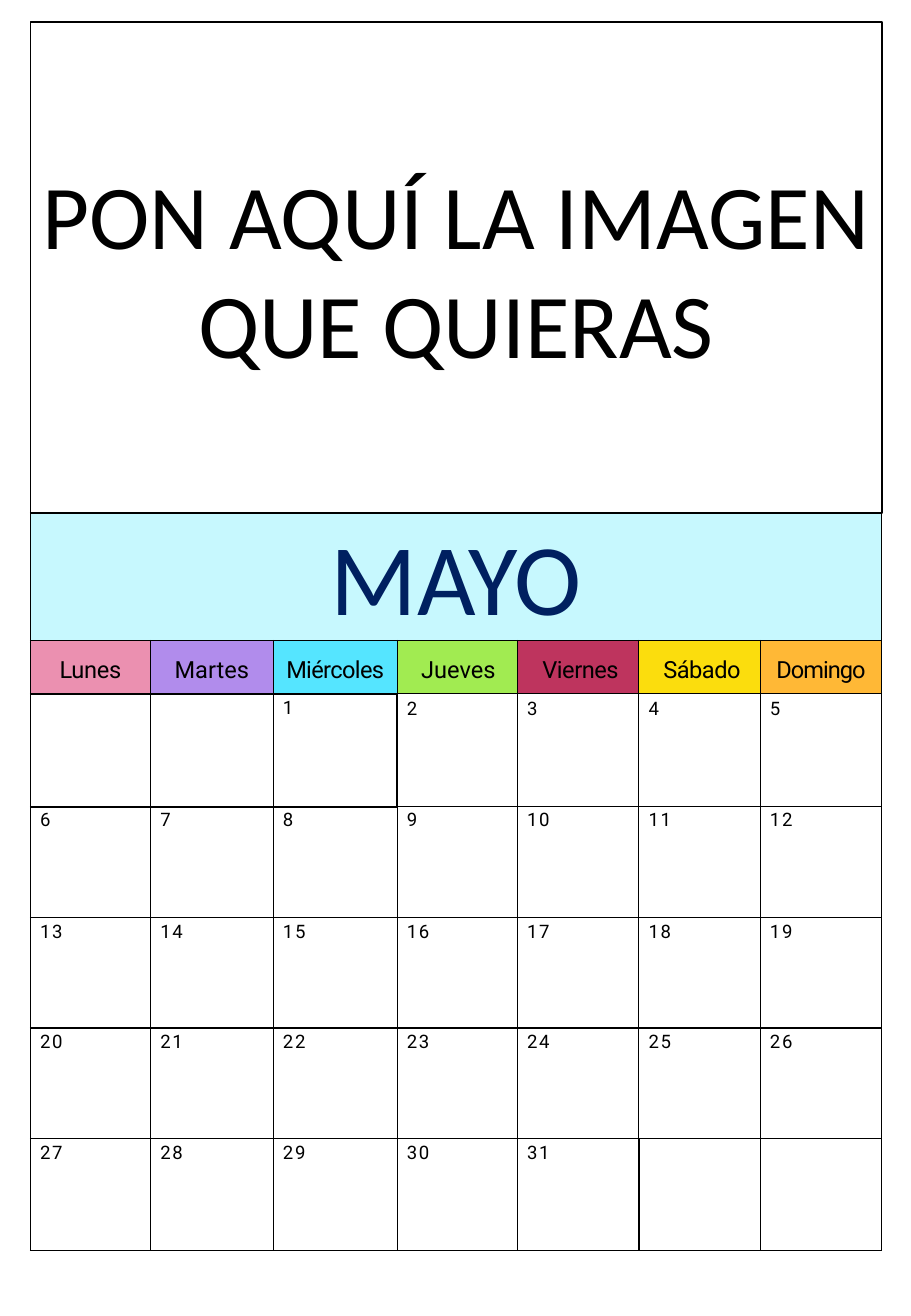
from lxml.etree import SubElement
from pptx import Presentation
from pptx.dml.color import RGBColor
from pptx.enum.shapes import MSO_SHAPE
from pptx.enum.text import MSO_ANCHOR, PP_ALIGN
from pptx.oxml.ns import qn
from pptx.util import Pt

PX = 9144
BLACK = RGBColor(0x00, 0x00, 0x00)
WHITE = RGBColor(0xFF, 0xFF, 0xFF)
NAVY = RGBColor(0x00, 0x20, 0x60)
PALE_CYAN = RGBColor(0xC7, 0xF8, 0xFE)
PINK = RGBColor(0xEB, 0x90, 0xB0)
PURPLE = RGBColor(0xB1, 0x8C, 0xEC)
CYAN = RGBColor(0x55, 0xE5, 0xFF)
GREEN = RGBColor(0xA1, 0xEB, 0x51)
CRIMSON = RGBColor(0xBE, 0x34, 0x5E)
YELLOW = RGBColor(0xFB, 0xDD, 0x0D)
ORANGE = RGBColor(0xFF, 0xB8, 0x36)

WEEKDAYS = [
    ("Lunes", PINK, -20, 0),
    ("Martes", PURPLE, 0, 0),
    ("Miércoles", CYAN, -40, 0),
    ("Jueves", GREEN, 0, 2),
    ("Viernes", CRIMSON, -30, 4),
    ("Sábado", YELLOW, -30, 4),
    ("Domingo", ORANGE, -60, 0),
]
FIRST_COLUMN = 2
DAYS_IN_MONTH = 31
COLUMN_WIDTHS = [99, 101, 102, 99, 100, 100, 100]
ROW_HEIGHTS = [44, 93, 91, 91, 91, 92]
WEEK_INSETS = [4, 2, 3, 3, 3]
STRONG_CELLS = {(1, 0), (1, 1), (1, 2), (5, 5), (5, 6)}
SIDES = {"lnL": (0, -1), "lnR": (0, 1), "lnT": (-1, 0), "lnB": (1, 0)}


def write(paragraph, text, font, size, color, spacing=0):
    run = paragraph.add_run()
    run.text = text
    run.font.name = font
    run.font.size = Pt(size)
    run.font.color.rgb = color
    if spacing:
        run.font._element.set("spc", str(spacing))


def add_grid(slide, left, top, widths, heights):
    box = [value * PX for value in (left, top, sum(widths), sum(heights))]
    table = slide.shapes.add_table(len(heights), len(widths), *box).table
    table.first_row = False
    table.horz_banding = False
    for column, width in zip(table.columns, widths):
        column.width = width * PX
    for row, height in zip(table.rows, heights):
        row.height = height * PX
    return table


def format_cell(cell, fill, inset, strong_sides=()):
    properties = cell._tc.get_or_add_tcPr()
    for side in SIDES:
        width = Pt(1 if side in strong_sides else 0.75)
        line = SubElement(properties, qn(f"a:{side}"), w=str(width))
        solid = SubElement(line, qn("a:solidFill"))
        SubElement(solid, qn("a:srgbClr"), val=str(BLACK))
    cell.fill.solid()
    cell.fill.fore_color.rgb = fill
    cell.margin_left = cell.margin_right = cell.margin_bottom = 0
    cell.margin_top = inset * PX


def cell_paragraph(cell, space_before, indent=0, centred=False):
    paragraph = cell.text_frame.paragraphs[0]
    paragraph.space_before = Pt(space_before)
    if indent:
        paragraph._p.get_or_add_pPr().set("marL", str(indent * PX))
    if centred:
        paragraph.alignment = PP_ALIGN.CENTER
        cell.vertical_anchor = MSO_ANCHOR.MIDDLE
    return paragraph


def strong_sides_of(row, column):
    return [
        side for side, (down, across) in SIDES.items()
        if STRONG_CELLS & {(row, column), (row + down, column + across)}
    ]


def add_image_area(slide, left, top, width, height):
    box = [value * PX for value in (left, top, width, height)]
    shape = slide.shapes.add_shape(MSO_SHAPE.RECTANGLE, *box)
    shape.shadow.inherit = False
    shape.fill.solid()
    shape.fill.fore_color.rgb = WHITE
    shape.line.color.rgb = BLACK
    shape.line.width = Pt(1)
    shape.text_frame.word_wrap = True
    shape.text_frame.vertical_anchor = MSO_ANCHOR.MIDDLE
    paragraph = shape.text_frame.paragraphs[0]
    paragraph.alignment = PP_ALIGN.CENTER
    write(paragraph, "PON AQUÍ LA IMAGEN QUE QUIERAS", "Calibri", 54, BLACK)


def add_month_banner(slide, left, top, width, height):
    cell = add_grid(slide, left, top, [width], [height]).cell(0, 0)
    format_cell(cell, PALE_CYAN, 5, ["lnB"])
    write(cell_paragraph(cell, 4.2, centred=True), "MAYO", "Calibri", 60, NAVY)


def add_calendar(slide, left, top):
    table = add_grid(slide, left, top, COLUMN_WIDTHS, ROW_HEIGHTS)
    for column, (name, fill, spacing, indent) in enumerate(WEEKDAYS):
        cell = table.cell(0, column)
        format_cell(cell, fill, 5, strong_sides_of(0, column))
        paragraph = cell_paragraph(cell, 4.2, indent, centred=True)
        write(paragraph, name, "Roboto", 14, BLACK, spacing)
    for week, week_inset in enumerate(WEEK_INSETS):
        for column in range(len(WEEKDAYS)):
            day = week * len(WEEKDAYS) + column - FIRST_COLUMN + 1
            inset = 3 if day == 1 else week_inset
            cell = table.cell(week + 1, column)
            format_cell(cell, WHITE, inset, strong_sides_of(week + 1, column))
            if 1 <= day <= DAYS_IN_MONTH:
                paragraph = cell_paragraph(cell, 4.8, indent=8)
                write(paragraph, str(day), "Roboto", 11, BLACK, 100)


def main():
    presentation = Presentation()
    presentation.slide_width = 750 * PX
    presentation.slide_height = 1083 * PX
    slide = presentation.slides.add_slide(presentation.slide_layouts[6])
    left, top, width = 25, 18, sum(COLUMN_WIDTHS)
    image_height, banner_height = 404, 105
    banner_top = top + image_height
    add_month_banner(slide, left, banner_top, width, banner_height)
    add_calendar(slide, left, banner_top + banner_height)
    add_image_area(slide, left, top, width, image_height)
    presentation.save("out.pptx")


if __name__ == "__main__":
    main()
